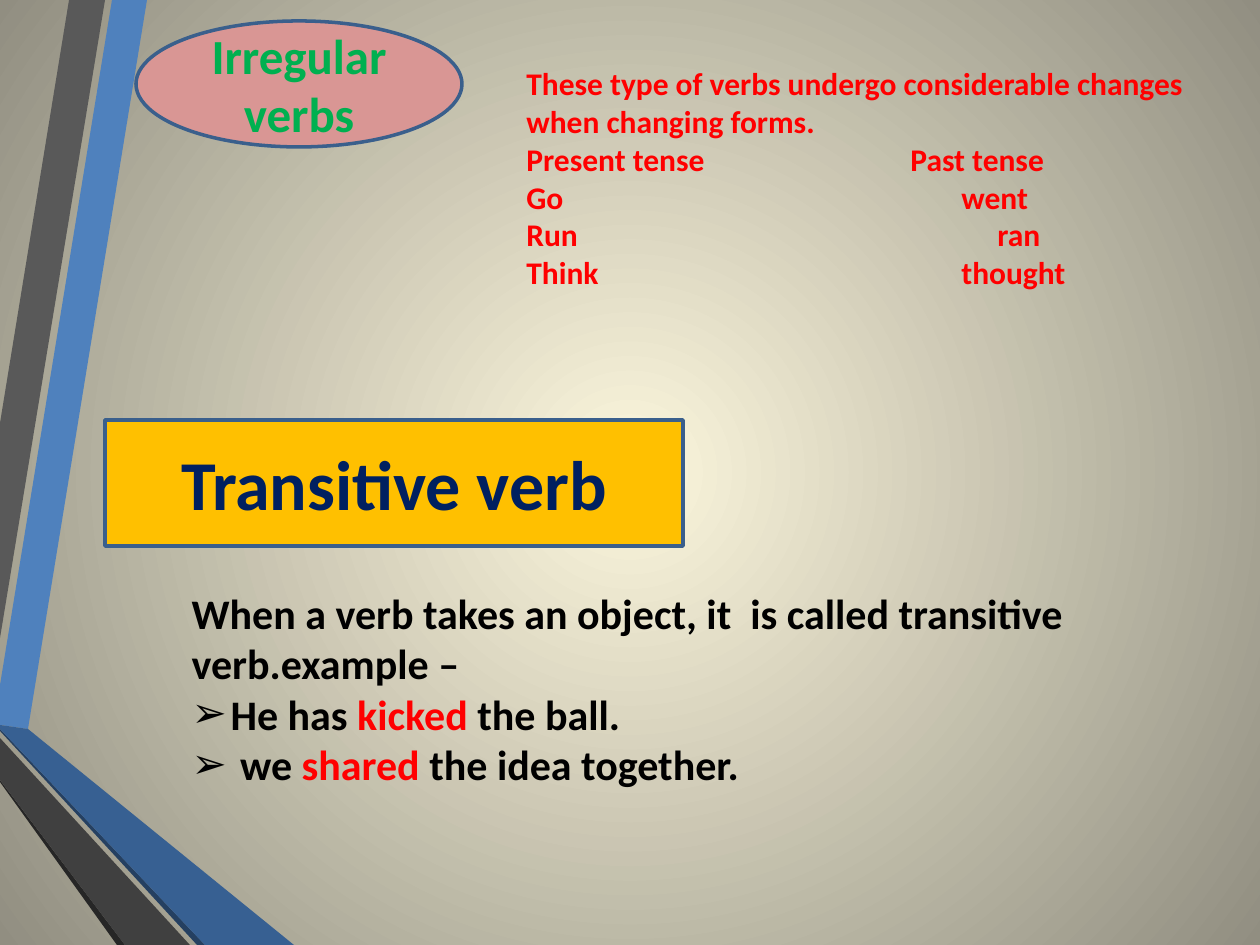
from lxml.etree import SubElement
from pptx import Presentation
from pptx.dml.color import RGBColor
from pptx.enum.shapes import MSO_SHAPE as Shape
from pptx.enum.text import MSO_ANCHOR as Anchor, MSO_AUTO_SIZE as AutoSize, PP_ALIGN as Align
from pptx.oxml.ns import qn
from pptx.util import Pt

PX = 914400 / 126
COLORS = {
    "center": "FCF7DD", "edge": "918E81",
    "blue": "4F81BD", "gray": "595959", "charcoal": "404040", "black_edge": "262626",
    "deep_blue": "376092", "navy_edge": "254061", "outline": "3A5F8C",
    "pink": "D99694", "green": "00B050", "gold": "FFC000", "navy": "002060",
    "red": "FF0000", "black": "000000",
}
# Ribbon outlines in px, from back to front
RIBBONS = [
    ("blue", [(0, 685), (0, 725), (28, 729), (147, 0), (112, 0)]),
    ("gray", [(105, 0), (69, 0), (0, 423), (0, 638)]),
    ("black_edge", [(0, 780), (0, 782), (117, 945), (125, 945)]),
    ("navy_edge", [(0, 729), (0, 731), (197, 945), (205, 945)]),
    ("deep_blue", [(0, 729), (205, 945), (294, 945), (28, 729), (0, 725)]),
    ("charcoal", [(0, 780), (125, 945), (190, 945), (0, 738)]),
]
# Present tense, past tense, and the px at which the past tense starts
VERB_ROWS = [
    ("Present tense", "Past tense", 384),
    ("Go", "went", 435),
    ("Run", "ran", 471),
    ("Think", "thought", 435),
]
EXAMPLES = [("He has ", "kicked", " the ball."), (" we ", "shared", " the idea together.")]


def px(value):
    return round(value * PX)


def rgb(name):
    return RGBColor.from_string(COLORS[name])


def place(shape, box):
    shape.left, shape.top, shape.width, shape.height = map(px, box)


def set_font(font, size, color):
    font.name, font.size, font.bold = "Calibri", Pt(size), True
    font.color.rgb = rgb(color)


def paint_background(slide):
    fill = slide.background.fill
    fill.gradient()
    for stop, color in zip(fill.gradient_stops, ("center", "edge")):
        stop.color.rgb = rgb(color)
    # Swap the linear direction for a circular one
    gradient = slide.element.find(".//" + qn("a:gradFill"))
    gradient.remove(gradient.find(qn("a:lin")))
    circle = SubElement(gradient, qn("a:path"), path="circle")
    SubElement(circle, qn("a:fillToRect"), l="50000", t="50000", r="50000", b="50000")


def add_ribbons(slide):
    for color, points in RIBBONS:
        builder = slide.shapes.build_freeform(*points[0], scale=PX)
        builder.add_line_segments(points[1:], close=True)
        ribbon = builder.convert_to_shape()
        ribbon.shadow.inherit = False
        ribbon.fill.solid()
        ribbon.fill.fore_color.rgb = rgb(color)
        ribbon.line.fill.background()


def fill_heading(shape, box, text, size, text_color, fill_color):
    place(shape, box)
    shape.fill.solid()
    shape.fill.fore_color.rgb = rgb(fill_color)
    shape.line.color.rgb = rgb("outline")
    shape.line.width = Pt(2)
    frame = shape.text_frame
    frame.word_wrap, frame.auto_size = True, AutoSize.NONE
    frame.vertical_anchor = Anchor.MIDDLE
    paragraph = frame.paragraphs[0]
    paragraph.text, paragraph.alignment = text, Align.CENTER
    set_font(paragraph.font, size, text_color)


def add_irregular_verbs(slide, box):
    frame = slide.shapes.add_textbox(*map(px, box)).text_frame
    frame.word_wrap = True
    intro = frame.paragraphs[0]
    intro.text = "These type of verbs undergo considerable changes when changing forms."
    set_font(intro.font, 18, "red")
    for present, past, tab in VERB_ROWS:
        paragraph = frame.add_paragraph()
        paragraph.text = f"{present}\t{past}"
        set_font(paragraph.font, 18, "red")
        tabs = SubElement(paragraph._p.get_or_add_pPr(), qn("a:tabLst"))
        SubElement(tabs, qn("a:tab"), pos=str(px(tab)), algn="l")
        # The schema puts tab stops ahead of the default font
        tabs.getparent().insert(0, tabs)


def set_bullet(paragraph, character=None):
    properties = paragraph._p.get_or_add_pPr()
    indent = px(39) if character else 0
    properties.set("marL", str(indent))
    properties.set("indent", str(-indent))
    if character:
        SubElement(properties, qn("a:buChar"), char=character)
    else:
        SubElement(properties, qn("a:buNone"))


def fill_transitive_body(shape, box):
    place(shape, box)
    frame = shape.text_frame
    frame.word_wrap, frame.auto_size = True, AutoSize.NONE
    intro = frame.paragraphs[0]
    intro.text = "When a verb takes an object, it  is called transitive verb.example –"
    intro.space_before = Pt(0)
    set_bullet(intro)
    set_font(intro.font, 24, "black")
    for parts in EXAMPLES:
        paragraph = frame.add_paragraph()
        paragraph.space_before = Pt(0)
        set_bullet(paragraph, "➢")
        for text, color in zip(parts, ("black", "red", "black")):
            run = paragraph.add_run()
            run.text = text
            set_font(run.font, 24, color)


def main():
    presentation = Presentation()
    presentation.slide_width, presentation.slide_height = px(1260), px(945)
    slide = presentation.slides.add_slide(presentation.slide_layouts[1])
    paint_background(slide)
    add_ribbons(slide)

    # Irregular verbs
    ellipse = slide.shapes.add_shape(Shape.OVAL, 0, 0, 0, 0)
    ellipse.shadow.inherit = False
    fill_heading(ellipse, (136, 21, 326, 126), "Irregular verbs", 28, "green", "pink")
    add_irregular_verbs(slide, (514, 58, 703, 280))

    # Transitive verbs
    fill_heading(slide.shapes.title, (105, 420, 578, 126), "Transitive verb", 40, "navy", "gold")
    fill_transitive_body(slide.placeholders[1], (179, 581, 976, 217))

    presentation.save("out.pptx")


if __name__ == "__main__":
    main()
